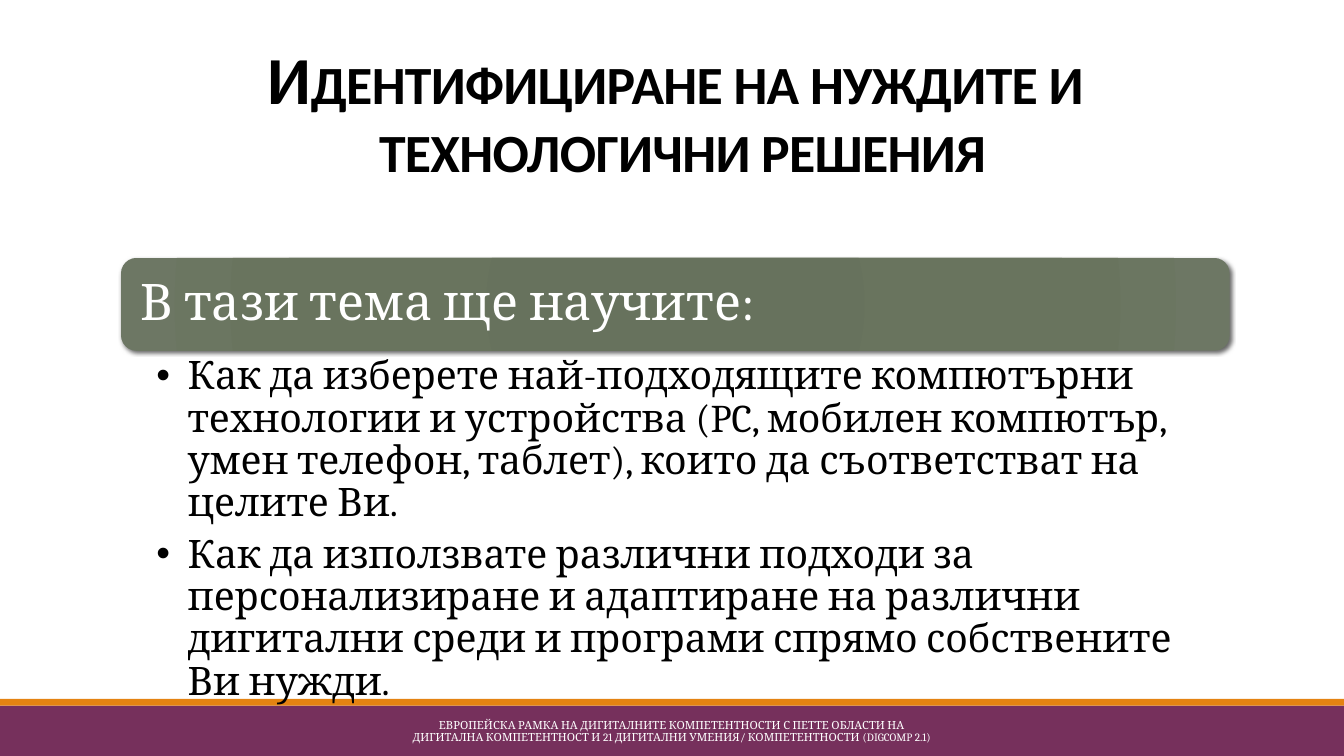
"""Build the topic slide on identifying needs and technological solutions."""
from lxml.etree import SubElement, fromstring
from pptx import Presentation
from pptx.dml.color import RGBColor
from pptx.enum.shapes import MSO_SHAPE as Shape
from pptx.enum.text import MSO_ANCHOR as Anchor, PP_ALIGN as Align
from pptx.oxml.ns import nsdecls, qn
from pptx.util import Cm, Pt

TITLE = "Идентифициране на нуждите и технологични решения"
HEADING = "В тази тема ще научите:"
GOALS = [
    "Как да изберете най-подходящите компютърни технологии и устройства "
    "(PC, мобилен компютър, умен телефон, таблет), които да съответстват на целите Ви.",
    "Как да използвате различни подходи за персонализиране и адаптиране на различни "
    "дигитални среди и програми спрямо собствените Ви нужди.",
]
FOOTER = ("ЕВРОПЕЙСКА РАМКА НА ДИГИТАЛНИТЕ КОМПЕТЕНТНОСТИ С ПЕТТЕ ОБЛАСТИ НА "
          "ДИГИТАЛНА КОМПЕТЕНТНОСТ И 21 ДИГИТАЛНИ УМЕНИЯ/ КОМПЕТЕНТНОСТИ (DIGCOMP 2.1)")
COLORS = {"purple": "76305C", "orange": "E48312", "white": "FFFFFF", "black": "000000"}
GREENS = [(0, "66715B"), (34, "67725D"), (70, "69745E"), (100, "6D7764")]

WIDTH, HEIGHT = 33.87, 19.05
LEFT, CONTENT_WIDTH = 3.05, 27.94
FOOTER_TOP, STRIPE = 17.78, 0.17
BANNER_TOP, BANNER_HEIGHT, BANNER_PAD = 6.5, 2.34, 0.11


def add_block(page, kind, box, color):
    """Add a borderless shape in one colour."""
    block = page.shapes.add_shape(kind, *map(Cm, box))
    block.shadow.inherit = False
    block.fill.solid()
    block.fill.fore_color.rgb = RGBColor.from_string(COLORS[color])
    block.line.fill.background()
    return block


def style_banner(banner):
    """Give the banner its radial gradient and soft shadow."""
    stops = "".join(f'<a:gs pos="{pos * 1000}"><a:srgbClr val="{color}"/></a:gs>'
                    for pos, color in GREENS)
    gradient = fromstring(
        f'<a:gradFill {nsdecls("a")} rotWithShape="1"><a:gsLst>{stops}</a:gsLst>'
        '<a:path path="circle"><a:fillToRect l="100000" t="100000" r="100000" b="100000"/>'
        '</a:path></a:gradFill>')
    props = banner.element.spPr
    props.replace(props.find(qn("a:solidFill")), gradient)
    shadow = SubElement(props.find(qn("a:effectLst")), qn("a:outerShdw"),
                        blurRad=str(Pt(3)), dist=str(Pt(2)), dir="2700000",
                        algn="tl", rotWithShape="0")
    color = SubElement(shadow, qn("a:srgbClr"), val=COLORS["black"])
    SubElement(color, qn("a:alpha"), val="60000")


def add_text(page, box, lines, size, color, font="Cambria", align=Align.LEFT,
             anchor=Anchor.TOP, insets=(0.25, 0.13, 0.25, 0.13), spacing=0.9,
             after=0, bullet=False, heading=False):
    """Add a text box with one paragraph per line."""
    frame = page.shapes.add_textbox(*map(Cm, box)).text_frame
    frame.word_wrap = True
    frame.vertical_anchor = anchor
    (frame.margin_left, frame.margin_top,
     frame.margin_right, frame.margin_bottom) = map(Cm, insets)
    for index, line in enumerate(lines):
        para = frame.add_paragraph() if index else frame.paragraphs[0]
        para.alignment, para.line_spacing, para.space_after = align, spacing, Pt(after)
        span = para.add_run()
        span.text = line
        span.font.name, span.font.size, span.font.bold = font, Pt(size), heading
        span.font.color.rgb = RGBColor.from_string(COLORS[color])
        if bullet:
            para.level = 1
            props = para._p.get_or_add_pPr()
            props.set("marL", str(Cm(0.79)))
            props.set("indent", str(Cm(-0.79)))
            SubElement(props, qn("a:buFont"), typeface="Arial")
            SubElement(props, qn("a:buChar"), char="•")
        if heading:
            props = span._r.get_or_add_rPr()
            props.set("cap", "small")
            props.set("spc", "-50")


def main():
    """Draw the slide and save the deck."""
    deck = Presentation()
    deck.slide_width, deck.slide_height = Cm(WIDTH), Cm(HEIGHT)
    page = deck.slides.add_slide(deck.slide_layouts[6])

    add_block(page, Shape.RECTANGLE, (0, FOOTER_TOP, WIDTH, HEIGHT - FOOTER_TOP), "purple")
    add_block(page, Shape.RECTANGLE, (0, FOOTER_TOP - STRIPE, WIDTH, STRIPE), "orange")
    add_text(page, (LEFT, 0.79, CONTENT_WIDTH, 4.04), [TITLE], 48, "black", font="Calibri",
             align=Align.CENTER, anchor=Anchor.BOTTOM, spacing=0.85, heading=True)
    add_text(page, (10.24, 17.93, 13.39, 1.02), [FOOTER], 8, "white", align=Align.CENTER,
             anchor=Anchor.MIDDLE, insets=(0.1,) * 4, after=6)

    banner_box = (LEFT, BANNER_TOP, CONTENT_WIDTH, BANNER_HEIGHT)
    style_banner(add_block(page, Shape.ROUNDED_RECTANGLE, banner_box, "white"))
    heading_box = (LEFT + BANNER_PAD, BANNER_TOP + BANNER_PAD,
                   CONTENT_WIDTH - 2 * BANNER_PAD, BANNER_HEIGHT - 2 * BANNER_PAD)
    add_text(page, heading_box, [HEADING], 36, "white", anchor=Anchor.MIDDLE,
             insets=(0.38,) * 4)
    add_text(page, (LEFT, BANNER_TOP + BANNER_HEIGHT, CONTENT_WIDTH, 6.83), GOALS, 28,
             "black", insets=(0.89, 0.13, 0.71, 0.13), after=6.4, bullet=True)
    deck.save("out.pptx")


if __name__ == "__main__":
    main()
